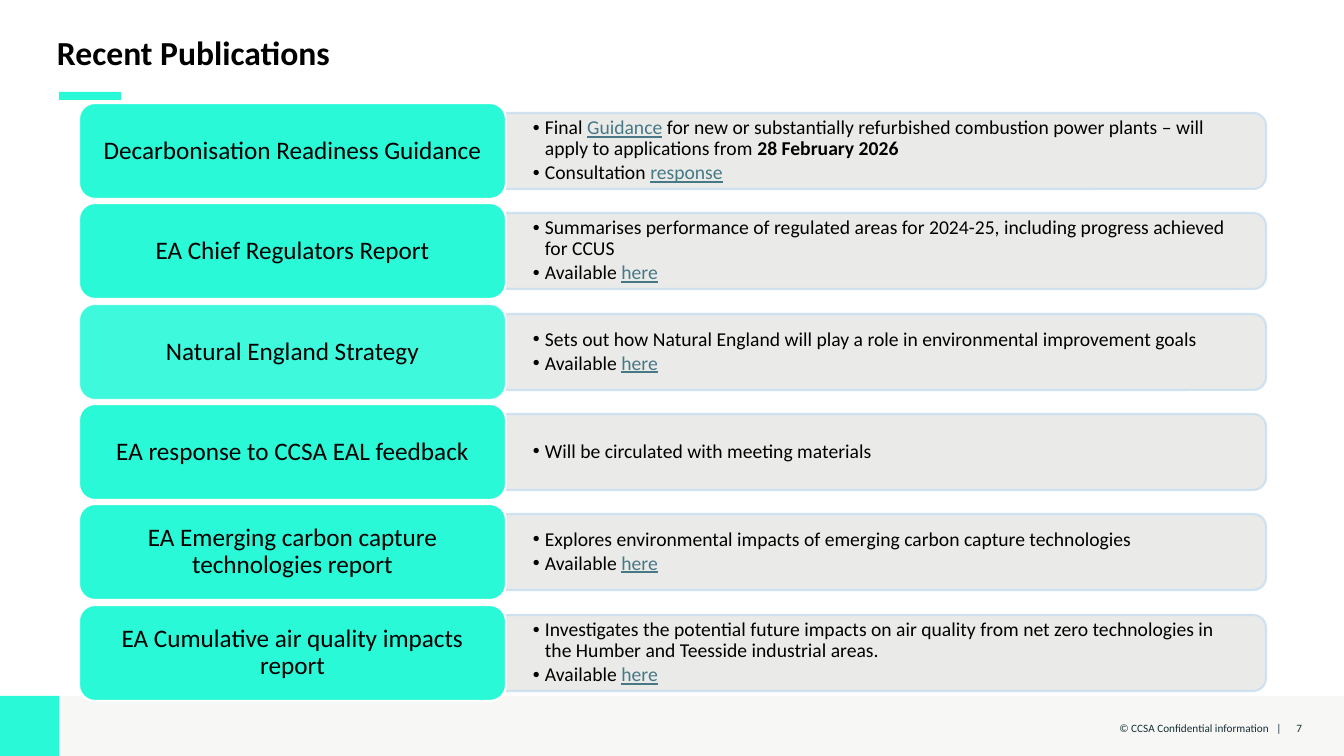
from lxml.etree import SubElement as Sub
from pptx import Presentation
from pptx.dml.color import RGBColor as RGB
from pptx.enum.shapes import MSO_SHAPE as Shape
from pptx.enum.text import MSO_ANCHOR as Anchor, MSO_AUTO_SIZE as Auto, PP_ALIGN as Align
from pptx.oxml.ns import qn
from pptx.util import Pt

PX = 914400 / 100.8
MINT, MIST, BLUE = "2AF9D8", "E8E9E7", "CCDFEF"
WHITE, BLACK, INK, LINK = "FFFFFF", "000000", "142F35", "467886"
BOLD = {"bold": True}
LINKED = {"color": LINK, "underline": True}
HERE = [("Available ", {}), ("here", LINKED)]

# Each row: label, opacity of the label in percent, bullets made of runs
ROWS = [
    ("Decarbonisation Readiness Guidance", 100, [
        [("Final ", {}), ("Guidance", LINKED),
         (" for new or substantially refurbished combustion power plants – will "
          "apply to applications from ", {}),
         ("28 February 2026", BOLD)],
        [("Consultation ", {}), ("response", LINKED)]]),
    ("EA Chief Regulators Report", 100, [
        [("Summarises performance of regulated areas for 2024-25, including "
          "progress achieved for CCUS", {})],
        HERE]),
    ("Natural England Strategy", 90, [
        [("Sets out how Natural England will play a role in environmental "
          "improvement goals", {})],
        HERE]),
    ("EA response to CCSA EAL feedback", 100, [
        [("Will be circulated with meeting materials", {})]]),
    ("EA Emerging carbon capture technologies report", 100, [
        [("Explores environmental impacts of emerging carbon capture "
          "technologies", {})],
        HERE]),
    ("EA Cumulative air quality impacts report", 100, [
        [("Investigates the potential future impacts on air quality from net zero "
          "technologies in the Humber and Teesside industrial areas.", {})],
        HERE]),
]


def px(n):
    return round(n * PX)


def rgb(code):
    return RGB.from_string(code)


def put(item, values):
    for name, value in values.items():
        setattr(item, name, value)


def block(slide, kind, box, fill, line=None, alpha=100):
    """Draw a preset shape; alpha is its opacity in percent."""
    shape = slide.shapes.add_shape(kind, *map(px, box))
    shape.shadow.inherit = False
    shape.fill.solid()
    shape.fill.fore_color.rgb = rgb(fill)
    if line:
        shape.line.color.rgb = rgb(line)
        shape.line.width = Pt(1.5)
    else:
        shape.line.fill.background()
    if alpha < 100:
        for tint in shape.element.spPr.iter(qn("a:srgbClr")):
            Sub(tint, qn("a:alpha"), val=str(alpha * 1000))
    return shape


def frame(shape, anchor, pads):
    text = shape.text_frame
    left, top, right, low = map(px, pads)
    put(text, {"word_wrap": True, "auto_size": Auto.NONE,
               "vertical_anchor": anchor, "margin_left": left,
               "margin_top": top, "margin_right": right, "margin_bottom": low})
    return text


def write(para, words, size, color=BLACK, **style):
    run = para.add_run()
    run.text = words
    put(run.font, {"name": "Calibri", "size": Pt(size), **style})
    run.font.color.rgb = rgb(color)


def bullet(para):
    props = para._p.get_or_add_pPr()
    props.set("marL", str(px(12)))
    props.set("indent", str(px(-12)))
    Sub(props, qn("a:buFont"), typeface="Arial")
    Sub(props, qn("a:buChar"), char="•")


def head(slide, words):
    title = slide.shapes.title
    put(title, dict(zip(("left", "top", "width", "height"),
                        map(px, (57, 19, 1238, 54)))))
    para = frame(title, Anchor.BOTTOM, (0, 0, 0, 0)).paragraphs[0]
    put(para, {"alignment": Align.LEFT, "line_spacing": 0.9})
    write(para, words, 24, bold=True)


def note(slide, box, pads, words):
    area = slide.shapes.add_textbox(*map(px, box))
    para = frame(area, Anchor.TOP, pads).paragraphs[0]
    para.alignment = Align.RIGHT
    write(para, words, 8, INK)


def panel(slide, mid, items):
    """Draw the grey panel centred on height mid, with its bullets."""
    left, wide, high = 506, 760, 76
    box = (left + (wide - high) // 2, mid - wide // 2, high, wide)
    block(slide, Shape.ROUND_2_SAME_RECTANGLE, box, MIST, BLUE, 90).rotation = 90
    area = slide.shapes.add_textbox(*map(px, (left, mid - 34, 756, 68)))
    text = frame(area, Anchor.MIDDLE, (27, 14, 27, 14))
    for i, runs in enumerate(items):
        para = text.add_paragraph() if i else text.paragraphs[0]
        bullet(para)
        put(para, {"alignment": Align.LEFT, "line_spacing": 0.9,
                   "space_after": Pt(2)})
        for words, style in runs:
            write(para, words, 14, **style)


def label(slide, mid, words, alpha):
    shape = block(slide, Shape.ROUNDED_RECTANGLE, (79, mid - 48, 427, 96),
                  MINT, WHITE, alpha)
    para = frame(shape, Anchor.MIDDLE, (12, 8, 12, 8)).paragraphs[0]
    put(para, {"alignment": Align.CENTER, "line_spacing": 0.9})
    write(para, words, 18)


def main():
    deck = Presentation()
    put(deck, {"slide_width": px(1344), "slide_height": px(756)})
    slide = deck.slides.add_slide(deck.slide_layouts[5])
    block(slide, Shape.RECTANGLE, (59, 92, 62, 8), MINT)
    head(slide, "Recent Publications")
    block(slide, Shape.RECTANGLE, (0, 696, 1344, 60), "E0E1DD", alpha=25)
    note(slide, (1271, 716, 31, 15), (10, 5, 0, 5), "7")
    block(slide, Shape.RECTANGLE, (0, 696, 59, 60), MINT)
    note(slide, (762, 716, 530, 26), (10, 5, 10, 5),
         "© CCSA Confidential information\u00a0\u00a0 |".replace("\u00a0", " "))
    for i, (words, alpha, items) in enumerate(ROWS):
        mid = 151 + round(i * 100.3)
        panel(slide, mid, items)
        label(slide, mid, words, alpha)
    deck.save("out.pptx")


if __name__ == "__main__":
    main()
